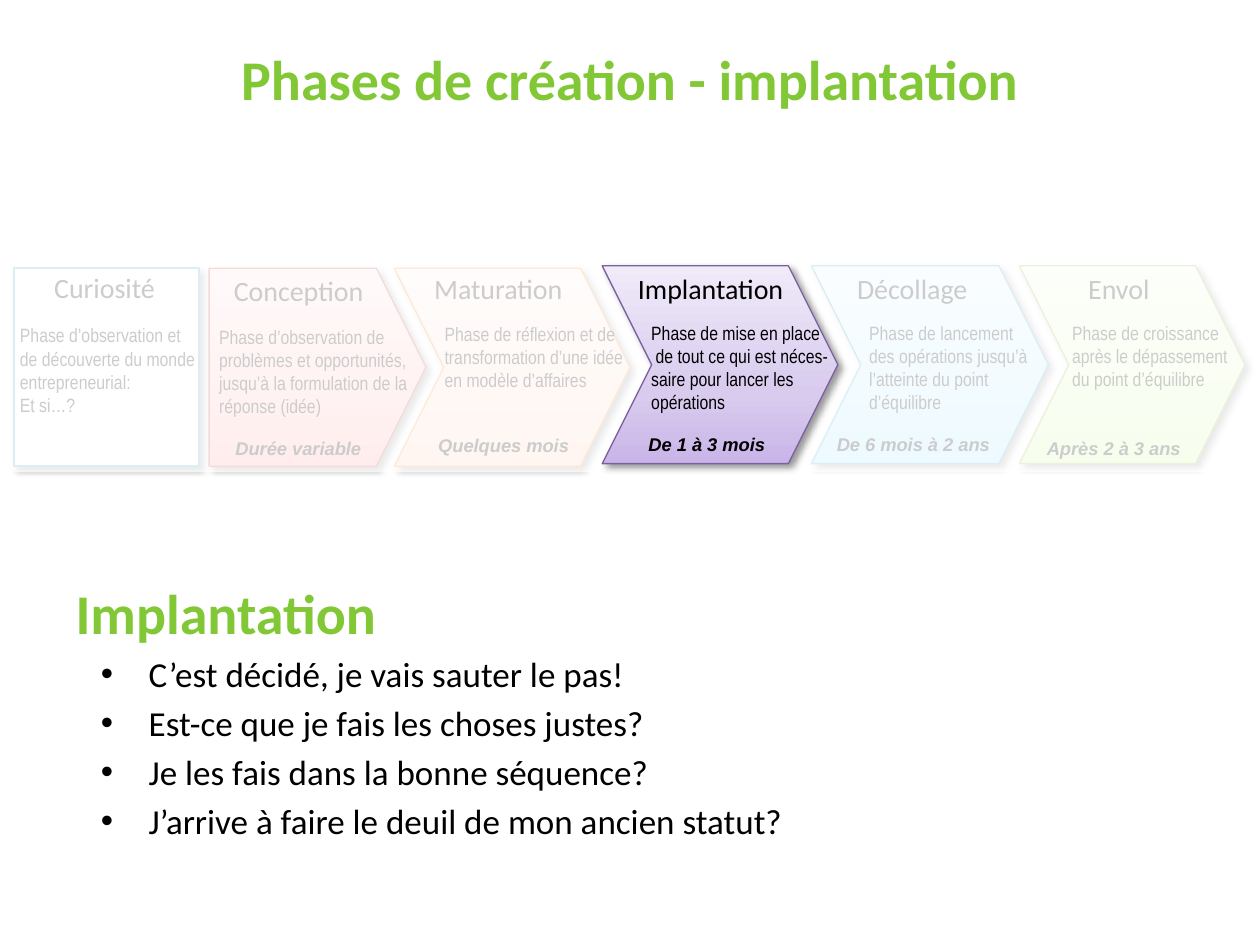
from dataclasses import dataclass
from lxml import etree
from pptx import Presentation
from pptx.dml.color import RGBColor
from pptx.enum.shapes import MSO_SHAPE
from pptx.enum.text import MSO_ANCHOR, MSO_AUTO_SIZE, PP_ALIGN
from pptx.oxml import parse_xml
from pptx.oxml.ns import nsdecls, qn
from pptx.util import Emu, Inches, Pt

RECT, PLATE, CHEVRON = MSO_SHAPE.RECTANGLE, MSO_SHAPE.PENTAGON, MSO_SHAPE.CHEVRON
LEFT, CENTER = PP_ALIGN.LEFT, PP_ALIGN.CENTER
TOP, MIDDLE = MSO_ANCHOR.TOP, MSO_ANCHOR.MIDDLE
GROW, FIXED = MSO_AUTO_SIZE.SHAPE_TO_FIT_TEXT, MSO_AUTO_SIZE.NONE


@dataclass(frozen=True)
class Theme:
    accent: str = "82C836"
    ink: str = "000000"
    paper: str = "FFFFFF"
    head: str = "Calibri"
    body: str = "Arial Narrow"
    note: str = "Arial"
    title_pt: float = 32
    list_pt: float = 20
    name_pt: float = 16
    body_pt: float = 11
    note_pt: float = 10.5


T = Theme()
TITLE = "Phases de création - implantation"
SUBTITLE = "Implantation"
QUESTIONS = [
    "C’est décidé, je vais sauter le pas!",
    "Est-ce que je fais les choses justes?",
    "Je les fais dans la bonne séquence?",
    "J’arrive à faire le deuil de mon ancien statut?",
]
PHASE_H, NAME_H, NOTE_H, LINE_H = 1.57, 0.37, 0.28, 0.18
FADED = [
    dict(kind=RECT, box=(0.11, 2.13, 1.47), colors=["FFFFFF"], line="4BACC6",
         name=("Curiosité", 0.18, 2.1, 1.3),
         text=(["Phase d’observation et de découverte du monde entrepreneurial:", "Et si…?"],
               0.06, 2.52, 1.61, 4)),
    dict(kind=CHEVRON, box=(6.44, 2.11, 1.88), colors=["A7E6FF", "C1EDFF", "E7F8FF"], line="46AAC5",
         name=("Décollage", 6.45, 2.11, 1.58),
         text=(["Phase de lancement \ndes opérations jusqu’à l’atteinte du point d’équilibre"],
               6.8, 2.5, 1.57, 4),
         note=("De 6 mois à 2 ans", 6.53, 3.39, 1.44, CENTER)),
    dict(kind=CHEVRON, box=(8.09, 2.11, 1.79), colors=["DAFDA7", "E4FCC2", "F5FFE7"], line="98B955",
         name=("Envol", 8.09, 2.11, 1.58),
         text=(["Phase de croissance\naprès le dépassement\ndu point d’équilibre"],
               8.41, 2.5, 1.48, 3),
         note=("Après 2 à 3 ans", 8.2, 3.42, 1.28, CENTER)),
    dict(kind=PLATE, box=(1.66, 2.13, 1.72), colors=["FFA6A5", "FFC0BF", "FFE7E7"], line="BF4C48",
         name=("Conception", 1.72, 2.12, 1.3),
         text=(["Phase d’observation de problèmes et opportunités, jusqu’à la formulation de la réponse (idée)"],
               1.64, 2.53, 1.72, 4),
         note=("Durée variable", 1.77, 3.42, 1.22, LEFT)),
    dict(kind=CHEVRON, box=(3.13, 2.13, 1.87), colors=["FFD2BD", "FFDED0", "FFF2ED"], line="F69240",
         name=("Maturation", 3.16, 2.11, 1.59),
         text=(["Phase de réflexion et de transformation d’une idée en modèle d’affaires"],
               3.43, 2.51, 1.72, 3),
         note=("Quelques mois", 3.38, 3.4, 1.26, LEFT)),
]
CURRENT = dict(
    kind=CHEVRON, box=(4.78, 2.11, 1.87), colors=["C9B5E8", "D8CBEE", "F0EAF9"], line="7D60A0",
    name=("Implantation", 4.85, 2.11, 1.58),
    text=(["Phase de mise en place\n de tout ce qui est néces-saire pour lancer les opérations"],
          5.07, 2.5, 1.72, 4),
    note=("De 1 à 3 mois", 5.04, 3.39, 1.14, CENTER))
VEILS = [(6.42, 2.02, 3.58, 1.73), (0, 2.02, 5.08, 1.73)]
STOPS = [0, 35, 100]


def rgb(value):
    return RGBColor.from_string(value)


def inches(*box):
    return [Inches(v) for v in box]


def write(p, text, size, font, color=T.ink, bold=False, italic=False, align=LEFT):
    p.text = text
    p.alignment = align
    for r in p.runs:
        f = r.font
        f.size, f.name, f.bold, f.italic = Pt(size), font, bold, italic
        f.color.rgb = rgb(color)
    for br in p._p.findall(qn("a:br")):
        etree.SubElement(br, qn("a:rPr"), sz=str(int(size * 100)))


def add_text(shapes, box, lines, wrap=True, **fmt):
    tf = shapes.add_textbox(*inches(*box)).text_frame
    tf.word_wrap = wrap
    tf.auto_size = GROW
    for i, line in enumerate(lines):
        write(tf.add_paragraph() if i else tf.paragraphs[0], line, **fmt)


def set_gradient(sp, colors):
    stops = "".join(f'<a:gs pos="{pos * 1000}"><a:srgbClr val="{c}"/></a:gs>'
                    for pos, c in zip(STOPS, colors))
    grad = parse_xml(f'<a:gradFill {nsdecls("a")} rotWithShape="1"><a:gsLst>{stops}</a:gsLst>'
                     '<a:lin ang="16200000" scaled="1"/></a:gradFill>')
    sp._element.spPr.find(qn("a:prstGeom")).addnext(grad)


def add_shadow(sp):
    sp._element.spPr.append(parse_xml(
        f'<a:effectLst {nsdecls("a")}><a:outerShdw blurRad="{Pt(4)}" dist="{Pt(3)}" dir="2700000" '
        'algn="tl" rotWithShape="0"><a:srgbClr val="000000"><a:alpha val="40000"/></a:srgbClr>'
        '</a:outerShdw></a:effectLst>'))


def add_phase(s, phase):
    shapes = s.shapes.add_group_shape().shapes
    sp = shapes.add_shape(phase["kind"], *inches(*phase["box"], PHASE_H))
    if phase["kind"] == RECT:
        sp.fill.solid()
        sp.fill.fore_color.rgb = rgb(phase["colors"][0])
    else:
        sp.adjustments[0] = 0.25
        set_gradient(sp, phase["colors"])
    sp.line.color.rgb = rgb(phase["line"])
    sp.line.width = Pt(1 if phase["kind"] == RECT else 0.75)
    add_shadow(sp)
    name, *box = phase["name"]
    add_text(shapes, (*box, NAME_H), [name], size=T.name_pt, font=T.head, align=CENTER)
    lines, *box, rows = phase["text"]
    add_text(shapes, (*box, 0.1 + rows * LINE_H), lines, size=T.body_pt, font=T.body)
    if "note" in phase:
        note, *box, align = phase["note"]
        add_text(shapes, (*box, NOTE_H), [note], wrap=False, size=T.note_pt, font=T.note,
                 bold=True, italic=True, align=align)


def add_veil(s, box):
    sp = s.shapes.add_shape(RECT, *inches(*box))
    sp.shadow.inherit = False
    sp.fill.solid()
    sp.fill.fore_color.rgb = rgb(T.paper)
    color = sp._element.spPr.find(qn("a:solidFill")).find(qn("a:srgbClr"))
    etree.SubElement(color, qn("a:alpha"), val="80000")
    sp.line.fill.background()


def set_bullet(p, margin, char=None):
    pPr = p._p.get_or_add_pPr()
    pPr.set("marL", str(Inches(margin)))
    pPr.set("indent", str(Inches(-0.38)))
    if char:
        etree.SubElement(pPr, qn("a:buFont"), typeface=T.note)
        etree.SubElement(pPr, qn("a:buChar"), char=char)
    else:
        etree.SubElement(pPr, qn("a:buNone"))


def place(sp, box, anchor):
    sp.left, sp.top, sp.width, sp.height = inches(*box)
    tf = sp.text_frame
    tf.auto_size = FIXED
    tf.vertical_anchor = anchor
    return tf


def main():
    prs = Presentation()
    prs.slide_width, prs.slide_height = inches(10, 7.5)
    s = prs.slides.add_slide(prs.slide_layouts[1])
    heading = dict(size=T.title_pt, font=T.head, color=T.accent, bold=True)

    tf = place(s.shapes.title, (0.5, 0.3, 9, 0.64), MIDDLE)
    write(tf.paragraphs[0], TITLE, align=CENTER, **heading)

    tf = place(s.placeholders[1], (0.5, 4.54, 9, 2.16), TOP)
    p = tf.paragraphs[0]
    p.space_before = Emu(0)
    set_bullet(p, 0.38)
    write(p, SUBTITLE, **heading)
    for question in QUESTIONS:
        p = tf.add_paragraph()
        set_bullet(p, 0.58, "•")
        write(p, question, size=T.list_pt, font=T.head)

    for phase in FADED:
        add_phase(s, phase)
    for box in VEILS:
        add_veil(s, box)
    add_phase(s, CURRENT)
    prs.save("out.pptx")


if __name__ == "__main__":
    main()
